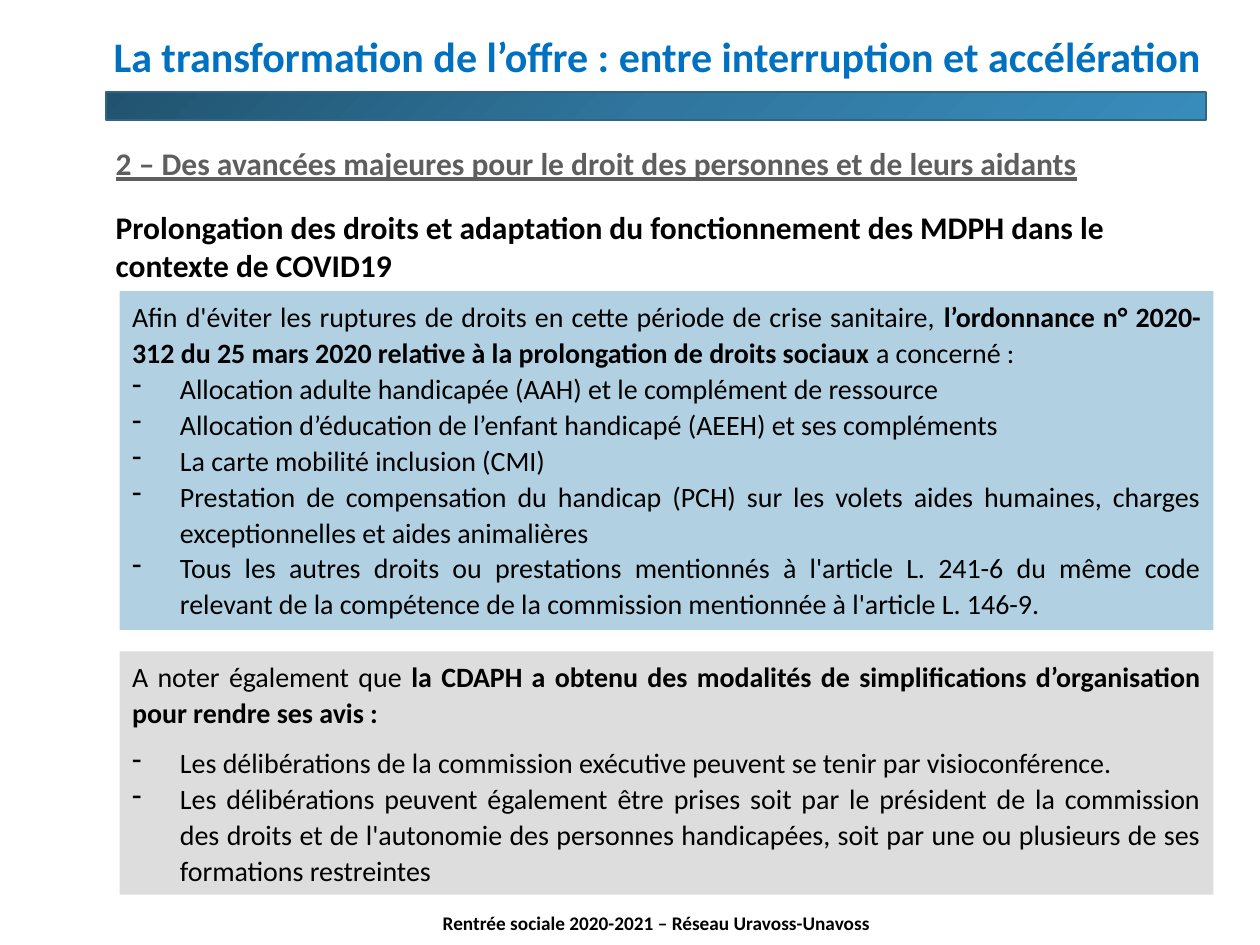
from dataclasses import dataclass

from lxml import etree
from pptx import Presentation
from pptx.dml.color import RGBColor
from pptx.enum.shapes import MSO_SHAPE
from pptx.enum.text import MSO_ANCHOR, PP_ALIGN
from pptx.oxml.ns import qn
from pptx.shapes.autoshape import Shape
from pptx.slide import Slide
from pptx.util import Inches, Pt

RECTANGLE = MSO_SHAPE.RECTANGLE
TOP, BOTTOM = MSO_ANCHOR.TOP, MSO_ANCHOR.BOTTOM
LEFT, CENTER = PP_ALIGN.LEFT, PP_ALIGN.CENTER
RIGHT, JUSTIFY = PP_ALIGN.RIGHT, PP_ALIGN.JUSTIFY
FONT = "Calibri"
BLACK = "000000"
BULLET_INDENT = Inches(0.38)
BAR_STOPS = ((0, "21536F"), (50, "30769E"), (100, "388CBC"))


@dataclass(frozen=True)
class Span:
    """A run of text with one weight."""

    text: str
    bold: bool = False


@dataclass(frozen=True)
class Para:
    """A paragraph of a panel."""

    spans: tuple[Span, ...]
    bullet: bool = False
    space_after: float = 0


@dataclass(frozen=True)
class Heading:
    """A single bold paragraph in its own text box."""

    text: str
    bounds: tuple[float, float, float, float]
    size: float
    color: str = BLACK
    align: PP_ALIGN = LEFT
    anchor: MSO_ANCHOR = TOP
    spacing: float = 1.0
    underline: bool = False


@dataclass(frozen=True)
class Panel:
    """A filled rectangle holding justified paragraphs."""

    top: float
    height: float
    fill: str
    paras: tuple[Para, ...]


def bullet(text: str) -> Para:
    """Return a dashed list item."""
    return Para((Span(text),), bullet=True)


HEADINGS = (
    Heading("Rentrée sociale 2020-2021 – Réseau Uravoss-Unavoss",
            (2.77, 7.18, 4.88, 0.29), 11, align=CENTER),
    Heading("2 – Des avancées majeures pour le droit des personnes et de leurs aidants",
            (0.82, 1.13, 8.71, 0.33), 18, "5E5E5E", spacing=0.9, underline=True),
    Heading("La transformation de l’offre : entre interruption et accélération",
            (0.58, 0.13, 9.05, 0.57), 24, "0070C0", RIGHT, BOTTOM, 0.9),
    Heading("Prolongation des droits et adaptation du fonctionnement des MDPH dans le "
            "contexte de COVID19", (0.82, 1.6, 8.54, 0.71), 18),
)

PANELS = (
    Panel(2.31, 2.69, "B1D1E3", (
        Para((
            Span("Afin d'éviter les ruptures de droits en cette période de crise sanitaire, "),
            Span("l’ordonnance n° 2020-312 du 25 mars 2020 relative à la prolongation "
                 "de droits sociaux ", bold=True),
            Span("a concerné :"),
        )),
        bullet("Allocation adulte handicapée (AAH) et le complément de ressource"),
        bullet("Allocation d’éducation de l’enfant handicapé (AEEH) et ses compléments"),
        bullet("La carte mobilité inclusion (CMI)"),
        bullet("Prestation de compensation du handicap (PCH) sur les volets aides humaines, "
               "charges exceptionnelles et aides animalières"),
        bullet("Tous les autres droits ou prestations mentionnés à l'article L. 241-6 du même "
               "code relevant de la compétence de la commission mentionnée à l'article "
               "L. 146-9."),
    )),
    Panel(5.17, 1.93, "DDDDDD", (
        Para((
            Span("A noter également que "),
            Span("la CDAPH a obtenu des modalités de simplifications d’organisation "
                 "pour rendre ses avis :", bold=True),
        ), space_after=8),
        bullet("Les délibérations de la commission exécutive peuvent se tenir par "
               "visioconférence."),
        bullet("Les délibérations peuvent également être prises soit par le président de la "
               "commission des droits et de l'autonomie des personnes handicapées, soit par "
               "une ou plusieurs de ses formations restreintes"),
    )),
)


def rgb(value: str) -> RGBColor:
    """Turn a hex string into a colour."""
    return RGBColor.from_string(value)


def add_span(paragraph, span: Span, size: float, color: str = BLACK,
             underline: bool = False) -> None:
    """Append one styled run to a paragraph."""
    run = paragraph.add_run()
    run.text = span.text
    run.font.name = FONT
    run.font.size = Pt(size)
    run.font.bold = span.bold
    run.font.color.rgb = rgb(color)
    if underline:
        run.font.underline = True


def add_rectangle(page: Slide, left: float, top: float, width: float, height: float) -> Shape:
    """Add a rectangle without shadow."""
    box = page.shapes.add_shape(RECTANGLE, Inches(left), Inches(top),
                                Inches(width), Inches(height))
    box.shadow.inherit = False
    return box


def draw_bar(page: Slide) -> None:
    """Draw the gradient bar under the title."""
    bar = add_rectangle(page, 0.84, 0.73, 8.73, 0.22)
    bar.fill.gradient()
    bar.fill.gradient_angle = 315
    stops = bar.element.spPr.find(f".//{qn('a:gsLst')}")
    for stop in list(stops):
        stops.remove(stop)
    for position, color in BAR_STOPS:
        stop = etree.SubElement(stops, qn("a:gs"), pos=str(position * 1000))
        etree.SubElement(stop, qn("a:srgbClr"), val=color)
    bar.line.color.rgb = rgb("306684")
    bar.line.width = Pt(1)


def draw_heading(page: Slide, heading: Heading) -> None:
    """Draw a bold one-paragraph text box."""
    box = page.shapes.add_textbox(*(Inches(length) for length in heading.bounds))
    frame = box.text_frame
    frame.word_wrap = True
    frame.vertical_anchor = heading.anchor
    paragraph = frame.paragraphs[0]
    paragraph.alignment = heading.align
    paragraph.line_spacing = heading.spacing
    add_span(paragraph, Span(heading.text, bold=True), heading.size,
             heading.color, heading.underline)


def draw_panel(page: Slide, panel: Panel) -> None:
    """Draw a filled panel and its paragraphs."""
    box = add_rectangle(page, 0.95, panel.top, 8.68, panel.height)
    box.fill.solid()
    box.fill.fore_color.rgb = rgb(panel.fill)
    box.line.fill.background()
    frame = box.text_frame
    frame.word_wrap = True
    frame.vertical_anchor = TOP
    for index, para in enumerate(panel.paras):
        paragraph = frame.add_paragraph() if index else frame.paragraphs[0]
        paragraph.alignment = JUSTIFY
        paragraph.line_spacing = 1.07
        paragraph.space_after = Pt(para.space_after)
        if para.bullet:
            properties = paragraph._p.get_or_add_pPr()
            properties.set("marL", str(BULLET_INDENT))
            properties.set("indent", str(-BULLET_INDENT))
            etree.SubElement(properties, qn("a:buChar"), char="-")
        for span in para.spans:
            add_span(paragraph, span, 16)


def main() -> None:
    """Build and save the slide."""
    deck = Presentation()
    deck.slide_width, deck.slide_height = Inches(10), Inches(7.5)
    page = deck.slides.add_slide(deck.slide_layouts[6])
    draw_bar(page)
    for heading in HEADINGS:
        draw_heading(page, heading)
    for panel in PANELS:
        draw_panel(page, panel)
    deck.save("out.pptx")


if __name__ == "__main__":
    main()
